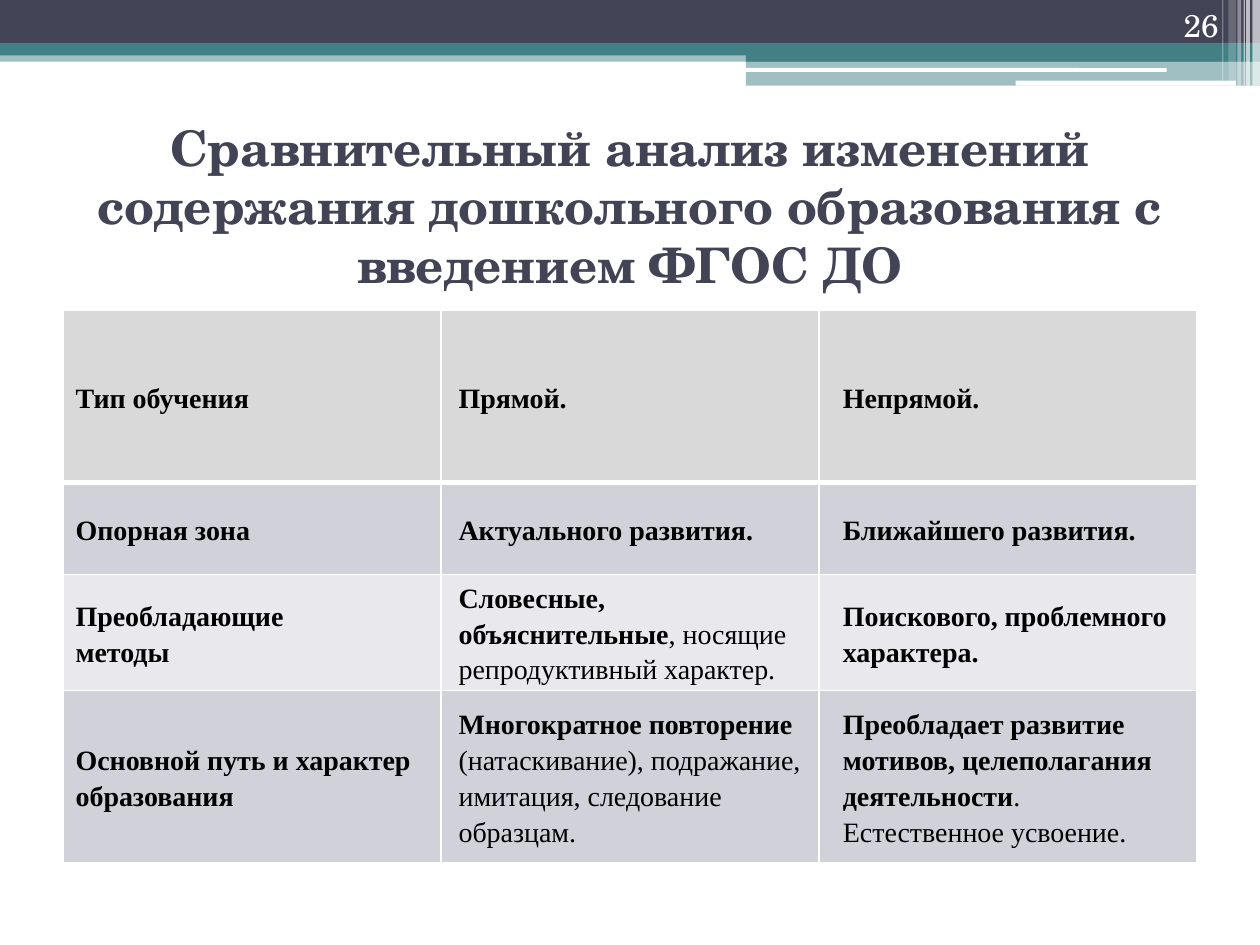
from typing import NamedTuple

import pptx
import pptx.dml.color
import pptx.enum.shapes
import pptx.enum.text
import pptx.oxml
import pptx.oxml.ns
import pptx.util
from pptx.util import Inches

COLORS = {
    "navy": "424456", "teal": "438086", "white": "FFFFFF", "black": "000000",
    "header": "D9D9D9", "band_dark": "D1D1DA", "band_light": "E9E9ED",
}
HEADING_FONT = "TeX Gyre Schola"
TABLE_FONT = "Times New Roman"
ALIGN = pptx.enum.text.PP_ALIGN
ANCHOR = pptx.enum.text.MSO_ANCHOR


class Bar(NamedTuple):
    left: float
    top: float
    width: float
    height: float
    color: str
    alpha: int = 100
    rounded: bool = False


class Label(NamedTuple):
    text: str
    left: float
    top: float
    width: float
    height: float
    size: int
    color: str
    align: ALIGN
    bold: bool = False
    bottom: float = 0.05


class Row(NamedTuple):
    height: float
    fill: str
    cells: tuple  # each cell: paragraphs of (bold text, regular text)


BARS = [
    Bar(0, 0.4, 10, 0.09, "teal", 50),
    Bar(0, 0, 10, 0.34, "navy"),
    Bar(0, 0.34, 10, 0.1, "teal"),
    Bar(5.92, 0.39, 4.08, 0.1, "teal"),
    Bar(5.92, 0.48, 4.08, 0.2, "teal", 50),
    Bar(5.91, 0.54, 3.35, 0.03, "white", rounded=True),
    Bar(8.06, 0.64, 1.75, 0.04, "white", rounded=True),
    Bar(9.94, 0, 0.06, 0.68, "white", 65),
    Bar(9.89, 0, 0.03, 0.68, "white", 65),
    Bar(9.87, 0, 0.01, 0.68, "white", 60),
    Bar(9.82, 0, 0.03, 0.68, "white", 40),
    Bar(9.75, 0, 0.06, 0.64, "white", 20),
    Bar(9.7, 0, 0.01, 0.64, "white", 30),
]

LABELS = [
    Label("Сравнительный анализ изменений содержания дошкольного образования с введением ФГОС ДО",
          0.5, 1.25, 9, 1.17, 28, "navy", ALIGN.CENTER, bold=True, bottom=0.09),
    Label("26", 8.94, 0, 0.83, 0.4, 18, "white", ALIGN.RIGHT),
]

ROWS = [
    Row(1.37, "header", (
        [("Тип обучения", "")],
        [("Прямой.", "")],
        [("Непрямой.", "")])),
    Row(0.73, "band_dark", (
        [("Опорная зона", "")],
        [("Актуального развития.", "")],
        [("Ближайшего развития.", "")])),
    Row(0.73, "band_light", (
        [("Преобладающие", ""), ("методы", "")],
        [("Словесные, объяснительные", ", носящие репродуктивный характер.")],
        [("Поискового, проблемного характера.", "")])),
    Row(1.37, "band_dark", (
        [("Основной путь и характер образования", "")],
        [("Многократное повторение", " (натаскивание), подражание, имитация, следование образцам.")],
        [("Преобладает развитие   мотивов, целеполагания деятельности", ". Естественное усвоение.")])),
]
INDENTS = (0.09, 0.13, 0.18)
RIGHT_MARGINS = (0.01, 0.01, 0.1)


def rgb(name: str) -> pptx.dml.color.RGBColor:
    return pptx.dml.color.RGBColor.from_string(COLORS[name])


def set_font(font, name: str, size: int, color: str) -> None:
    font.name = name
    font.size = pptx.util.Pt(size)
    font.color.rgb = rgb(color)


def add_bar(slide, bar: Bar) -> None:
    kinds = pptx.enum.shapes.MSO_SHAPE
    kind = kinds.ROUNDED_RECTANGLE if bar.rounded else kinds.RECTANGLE
    sp = slide.shapes.add_shape(kind, Inches(bar.left), Inches(bar.top),
                                Inches(bar.width), Inches(bar.height))
    sp.shadow.inherit = False
    sp.line.fill.background()
    sp.fill.solid()
    sp.fill.fore_color.rgb = rgb(bar.color)
    if bar.alpha < 100:
        clr = sp.fill._xPr.find(".//" + pptx.oxml.ns.qn("a:srgbClr"))
        clr.append(pptx.oxml.parse_xml(
            f'<a:alpha {pptx.oxml.ns.nsdecls("a")} val="{bar.alpha * 1000}"/>'))


def add_label(slide, label: Label) -> None:
    sp = slide.shapes.add_textbox(Inches(label.left), Inches(label.top),
                                  Inches(label.width), Inches(label.height))
    tf = sp.text_frame
    tf.word_wrap = True
    tf.vertical_anchor = ANCHOR.BOTTOM
    tf.margin_bottom = Inches(label.bottom)
    p = tf.paragraphs[0]
    p.text = label.text
    p.alignment = label.align
    p.font.bold = label.bold
    set_font(p.font, HEADING_FONT, label.size, label.color)


def set_borders(cell, bottom: int) -> None:
    tcPr = cell._tc.get_or_add_tcPr()
    sides = (("lnL", 1), ("lnR", 1), ("lnT", 1), ("lnB", bottom))
    for i, (side, width) in enumerate(sides):
        tcPr.insert(i, pptx.oxml.parse_xml(
            f'<a:{side} {pptx.oxml.ns.nsdecls("a")} w="{pptx.util.Pt(width)}">'
            f'<a:solidFill><a:srgbClr val="{COLORS["white"]}"/></a:solidFill></a:{side}>'))


def fill_cell(cell, paragraphs: list, fill: str, indent: float, right: float) -> None:
    cell.fill.solid()
    cell.fill.fore_color.rgb = rgb(fill)
    cell.vertical_anchor = ANCHOR.MIDDLE
    cell.margin_left, cell.margin_right = Inches(0.01), Inches(right)
    cell.margin_top = cell.margin_bottom = 0
    tf = cell.text_frame
    for i, parts in enumerate(paragraphs):
        p = tf.add_paragraph() if i else tf.paragraphs[0]
        p.line_spacing = 1.15
        p._p.get_or_add_pPr().set("marL", str(Inches(indent)))
        set_font(p.font, TABLE_FONT, 16, "black")
        for text, bold in zip(parts, (True, False)):
            if text:
                r = p.add_run()
                r.text = text
                r.font.bold = bold


def add_comparison_table(slide, rows: list) -> None:
    height = sum(row.height for row in rows)
    table = slide.shapes.add_table(len(rows), len(INDENTS), Inches(0.5), Inches(2.46),
                                   Inches(9), Inches(height)).table
    for i, row in enumerate(rows):
        table.rows[i].height = Inches(row.height)
        for j, paragraphs in enumerate(row.cells):
            cell = table.cell(i, j)
            fill_cell(cell, paragraphs, row.fill, INDENTS[j], RIGHT_MARGINS[j])
            set_borders(cell, bottom=1 if i else 3)


def main() -> None:
    prs = pptx.Presentation()
    prs.slide_width, prs.slide_height = Inches(10), Inches(7.5)
    slide = prs.slides.add_slide(prs.slide_layouts[6])

    # Header bands and the stripes in the corner
    for bar in BARS:
        add_bar(slide, bar)

    # Title and page number
    for label in LABELS:
        add_label(slide, label)

    # Comparison of the two approaches
    add_comparison_table(slide, ROWS)

    prs.save("out.pptx")


if __name__ == "__main__":
    main()
